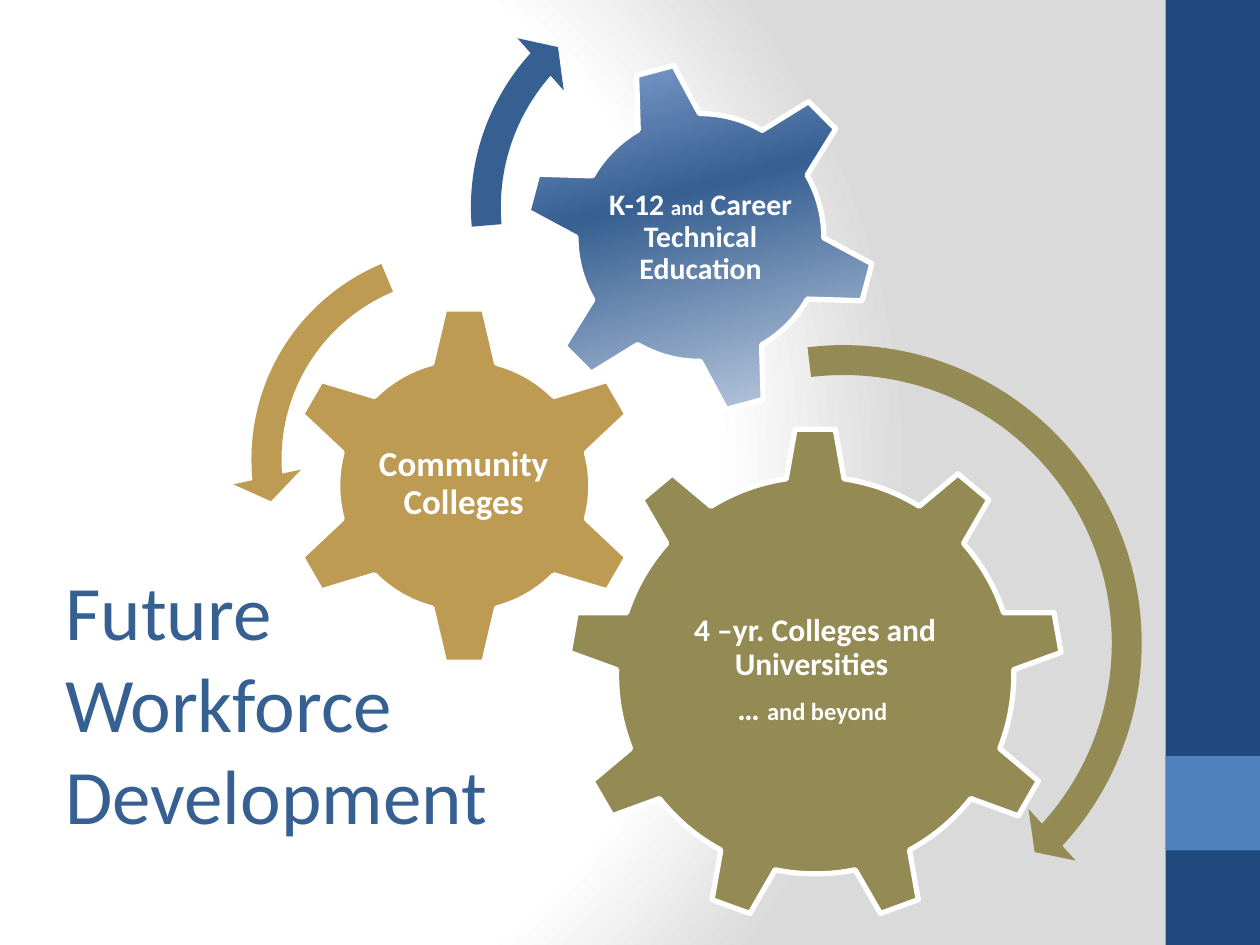
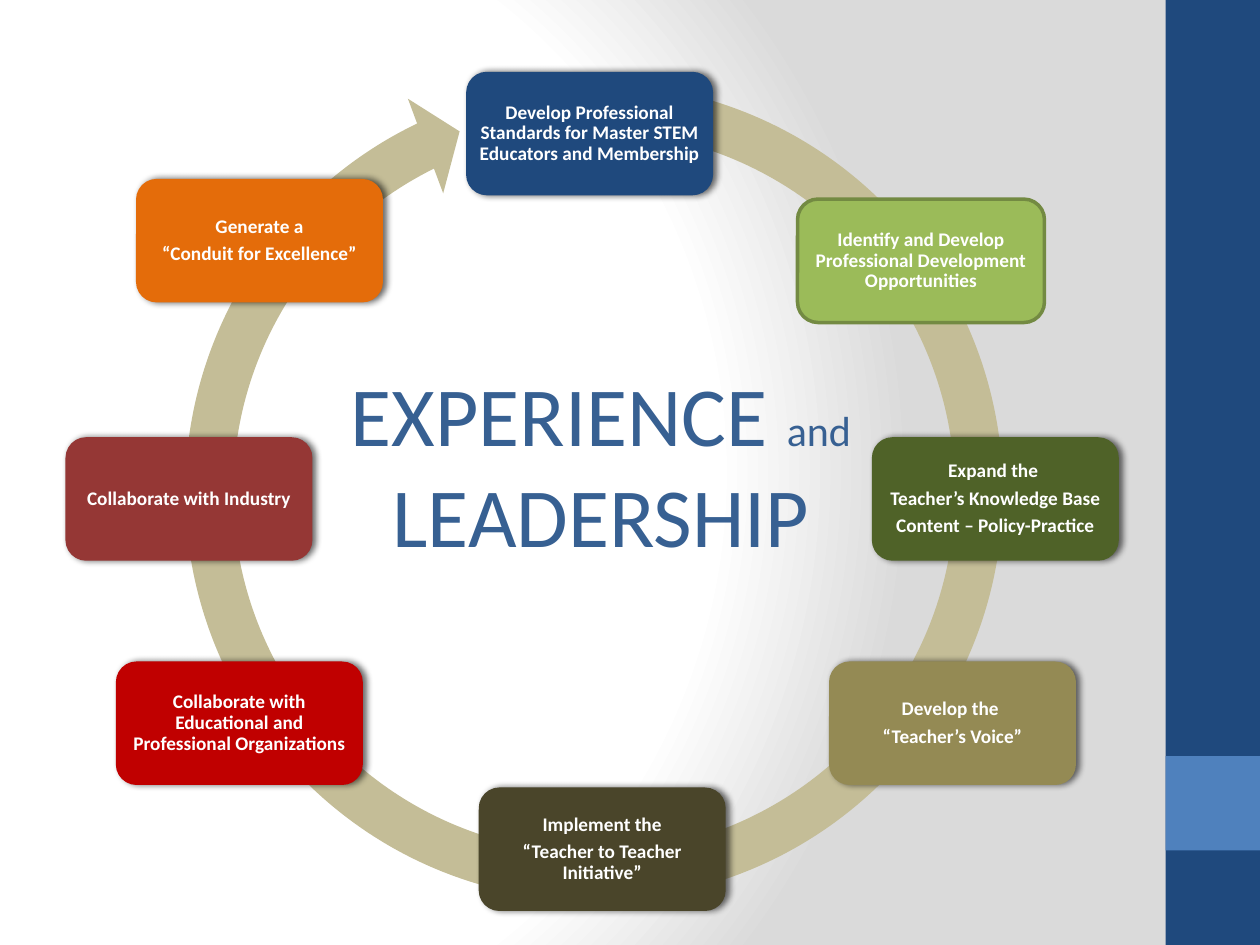
from pptx import Presentation, util as u
from pptx.dml.color import RGBColor
from pptx.enum import shapes, text
from pptx.oxml import parse_xml
from pptx.oxml.ns import nsdecls, qn
from lxml import etree

KIND = shapes.MSO_SHAPE
ALIGN = text.PP_ALIGN


class Theme:
    font = "Calibri"
    white, navy, band, blue = "FFFFFF", "1F497D", "4F81BD", "376092"
    olive, gold, sand = "948A54", "BD9B53", "C4BD97"
    backdrop = [(0, white), (75, white), (100, "DADADA")]
    steel = [(0, "9AB5E4"), (41, blue), (100, "E1E8F5")]
    title, centre_title, joiner, card_text = 44, 48, 24, 11


# ---- Content: places are in columns and rows of a 10 by 7.5 grid ----
SIDE_BANDS = [(9.25, 0, 0.75, 7.5, Theme.navy), (9.25, 6, 0.75, 0.75, Theme.band)]

# kind, left, top, size, rotation, fill, label box, label inset, paragraphs of (text, size)
GEARS = [
    (KIND.GEAR_9, 4.5, 3.39, 3.94, 0, Theme.olive, (5.29, 4.31, 2.36, 2.03), 0.03,
     [[("4 –yr. Colleges and Universities ", 18)], [("… ", 18), ("and beyond ", 14)]]),
    (KIND.GEAR_6, 2.25, 2.42, 2.87, 0, Theme.gold, (2.97, 3.14, 1.42, 1.41), 0.03,
     [[("Community Colleges", 20)]]),
    (KIND.GEAR_6, 4.15, 0.48, 2.81, 345, Theme.steel, (4.77, 1.1, 1.58, 1.58), 0.02,
     [[("K-12 ", 17), ("and", 12), (" Career Technical Education", 17)]]),
]

# kind, left, top, size, fill, (band share, head angle, end, start, head share)
GEAR_ARROWS = [
    (KIND.CIRCULAR_ARROW, 4.17, 2.58, 5.05, Theme.olive,
     (0.047, 2.99, 25.54, 157.83, 0.055)),
    (KIND.LEFT_CIRCULAR_ARROW, 1.84, 1.81, 3.67, Theme.gold,
     (0.065, 4.3, 104.89, 148.38, 0.075)),
    (KIND.CIRCULAR_ARROW, 3.58, -0.33, 3.95, Theme.blue,
     (0.06, 3.94, 133.14, 105.08, 0.07)),
]
WORKFORCE_TITLE = [[("Future Workforce Development", Theme.title)]]

CYCLE_ARROW = (KIND.CIRCULAR_ARROW, 1.26, 0.45, 6.91, Theme.sand,
               (0.055, 3.31, 146.42, 168.78, 0.058))
CARD_SIZE = (1.96, 0.98)
# left, top, fill, outline, paragraphs; clockwise from the top
STEPS = [
    (3.7, 0.57, Theme.navy, None,
     ["Develop Professional Standards for Master STEM Educators and Membership"]),
    (6.33, 1.58, "9BBB59", "738A42",
     ["Identify and Develop Professional Development Opportunities"]),
    (6.92, 3.47, "4F6228", None,
     ["Expand the ", "Teacher’s Knowledge Base", "Content – Policy-Practice"]),
    (6.58, 5.25, Theme.olive, None, ["Develop the ", "“Teacher’s Voice”"]),
    (3.8, 6.25, "4A452A", None, ["Implement the", "“Teacher to Teacher Initiative”"]),
    (0.92, 5.25, "C00000", None,
     ["Collaborate with Educational and Professional Organizations"]),
    (0.52, 3.47, "953735", None, ["Collaborate with Industry"]),
    (1.08, 1.42, "E46C0A", None, ["Generate a", "“Conduit for Excellence”"]),
]
CYCLE_TITLE = [[("EXPERIENCE ", Theme.centre_title), ("and", Theme.joiner)],
               [("LEADERSHIP", Theme.centre_title)]]

deck = Presentation()
deck.slide_width, deck.slide_height = u.Inches(10), u.Inches(7.5)
CELL = deck.slide_width / 10


# ---- Drawing helpers ----
def grid(*cells):
    return [u.Emu(round(c * CELL)) for c in cells]


def rgb(value):
    return RGBColor.from_string(value)


def fill_gradient(fill, owner, stops, direction):
    """Replace the default gradient of owner with the given stops."""
    fill.gradient()
    default = owner.find(".//" + qn("a:gradFill"))
    marks = "".join(f'<a:gs pos="{pos * 1000}"><a:srgbClr val="{colour}"/></a:gs>'
                    for pos, colour in stops)
    default.getparent().replace(default, parse_xml(
        f'<a:gradFill {nsdecls("a")} rotWithShape="1">'
        f'<a:gsLst>{marks}</a:gsLst>{direction}</a:gradFill>'))


def draw(slide, kind, box, fill, outline=None, width=3):
    shape = slide.shapes.add_shape(kind, *grid(*box))
    shape.shadow.inherit = False
    if isinstance(fill, list):
        fill_gradient(shape.fill, shape._element, fill, '<a:lin ang="5400000" scaled="0"/>')
    else:
        shape.fill.solid()
        shape.fill.fore_color.rgb = rgb(fill)
    if outline:
        shape.line.color.rgb = rgb(outline)
        shape.line.width = u.Pt(width)
    else:
        shape.line.fill.background()
    return shape


def draw_arrow(slide, kind, left, top, size, fill, bends):
    arrow = draw(slide, kind, (left, top, size, size), fill)
    for index, bend in enumerate(bends):
        arrow.adjustments[index] = bend


def write(frame, paragraphs, colour, align, bold=False):
    frame.word_wrap = True
    for index, runs in enumerate(paragraphs):
        paragraph = frame.paragraphs[0] if index == 0 else frame.add_paragraph()
        paragraph.alignment = align
        for words, size in runs:
            run = paragraph.add_run()
            run.text = words
            run.font.name, run.font.size, run.font.bold = Theme.font, u.Pt(size), bold
            run.font.color.rgb = rgb(colour)


def write_label(frame, paragraphs, inset):
    """White bold centred label with tight lines."""
    frame.vertical_anchor = text.MSO_ANCHOR.MIDDLE
    frame.margin_left = frame.margin_right = u.Inches(inset)
    frame.margin_top = frame.margin_bottom = u.Inches(inset)
    write(frame, paragraphs, Theme.white, ALIGN.CENTER, bold=True)
    for paragraph in frame.paragraphs:
        paragraph.line_spacing = 0.9
        after = etree.SubElement(paragraph._p.get_or_add_pPr(), qn("a:spcAft"))
        etree.SubElement(after, qn("a:spcPct"), val="35000")


def write_title(slide, box, paragraphs, align):
    frame = slide.shapes.add_textbox(*grid(*box)).text_frame
    write(frame, paragraphs, Theme.blue, align)
    frame.auto_size = text.MSO_AUTO_SIZE.SHAPE_TO_FIT_TEXT


def cast_shadow(shape):
    effects = shape._element.spPr.find(qn("a:effectLst"))
    effects.append(parse_xml(
        f'<a:outerShdw {nsdecls("a")} blurRad="{u.Pt(4)}" dist="{u.Pt(2)}" dir="0" '
        'rotWithShape="0"><a:srgbClr val="000000"><a:alpha val="60000"/>'
        '</a:srgbClr></a:outerShdw>'))


def new_slide():
    slide = deck.slides.add_slide(deck.slide_layouts[6])
    fill_gradient(slide.background.fill, slide._element, Theme.backdrop,
                  '<a:path path="circle"><a:fillToRect l="20000" t="50000" '
                  'r="100000" b="50000"/></a:path>')
    for *box, colour in SIDE_BANDS:
        draw(slide, KIND.RECTANGLE, box, colour)
    return slide


# ---- Slides ----
def build_gears():
    slide = new_slide()
    for kind, left, top, size, turn, fill, label_box, inset, label in GEARS:
        gear = draw(slide, kind, (left, top, size, size), fill, Theme.white)
        gear.rotation = turn
        write_label(slide.shapes.add_textbox(*grid(*label_box)).text_frame, label, inset)
    for arrow in GEAR_ARROWS:
        draw_arrow(slide, *arrow)
    write_title(slide, (0.42, 4.42, 3.67, 2.32), WORKFORCE_TITLE, ALIGN.LEFT)


def build_cycle():
    slide = new_slide()
    draw_arrow(slide, *CYCLE_ARROW)
    for left, top, fill, outline, lines in STEPS:
        card = draw(slide, KIND.ROUNDED_RECTANGLE, (left, top, *CARD_SIZE),
                    fill, outline, width=2)
        if not outline:
            cast_shadow(card)
        write_label(card.text_frame, [[(line, Theme.card_text)] for line in lines], 0.05)
    write_title(slide, (2.48, 2.83, 4.58, 2.26), CYCLE_TITLE, ALIGN.CENTER)


if __name__ == "__main__":
    build_gears()
    build_cycle()
    deck.save("out.pptx")
